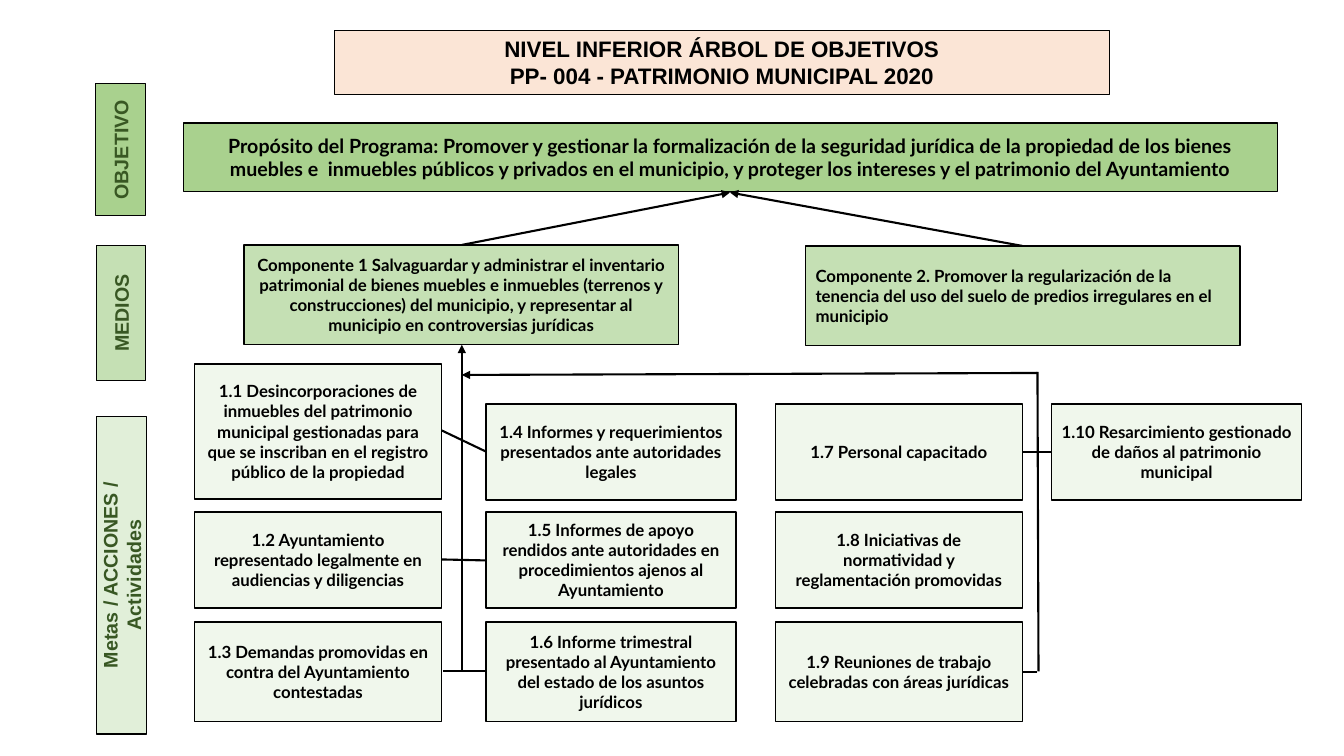
from lxml import etree
from pptx import Presentation
from pptx.dml.color import RGBColor
from pptx.enum.shapes import MSO_CONNECTOR, MSO_SHAPE
from pptx.enum.text import MSO_ANCHOR, PP_ALIGN
from pptx.oxml.ns import qn
from pptx.util import Inches, Pt

RECT = MSO_SHAPE.FLOWCHART_PROCESS
LINE = MSO_CONNECTOR.STRAIGHT
MIDDLE = MSO_ANCHOR.MIDDLE
TOP = MSO_ANCHOR.TOP
LEFT = PP_ALIGN.LEFT
CENTER = PP_ALIGN.CENTER
BLACK = RGBColor(0x00, 0x00, 0x00)
PEACH = RGBColor(0xFB, 0xE5, 0xD6)
GREEN = RGBColor(0xA9, 0xD1, 0x8E)
PALE = RGBColor(0xC5, 0xE0, 0xB4)
DARK = RGBColor(0x38, 0x57, 0x23)

TITLE = {"name": "Arial", "size": Pt(16), "bold": True}
LABEL = {"name": "Arial", "size": Pt(14), "bold": True}
GOAL = {"name": "Lato", "size": Pt(14), "bold": True}
BODY = {"name": "Lato", "size": Pt(12), "bold": True}


def style(shape, text, fill, font, ink=BLACK, align=CENTER, alpha=100, width=1):
    shape.fill.solid()
    shape.fill.fore_color.rgb = fill
    if alpha < 100:
        tint = shape.fill._xPr.find(qn("a:solidFill"))[0]
        etree.SubElement(tint, qn("a:alpha"), val=str(alpha * 1000))
    shape.line.color.rgb = BLACK
    shape.line.width = Pt(width)
    frame = shape.text_frame
    frame.word_wrap = True
    frame.vertical_anchor = MIDDLE
    frame.text = text
    for para in frame.paragraphs:
        para.alignment = align
        para.line_spacing = 1.0
        for key, value in font.items():
            setattr(para.font, key, value)
        para.font.color.rgb = ink


def box(left, top, width, height, *args, **opts):
    shape = slide.shapes.add_shape(
        RECT, Inches(left), Inches(top), Inches(width), Inches(height))
    shape.shadow.inherit = False
    style(shape, *args, **opts)
    return shape


deck = Presentation()
deck.slide_width = Inches(13.33)
deck.slide_height = Inches(7.5)
slide = deck.slides.add_slide(deck.slide_layouts[5])

title = slide.shapes.title
place = {"left": 3.32, "top": 0.3, "width": 7.68, "height": 0.64}
for key, value in place.items():
    setattr(title, key, Inches(value))
style(title, "NIVEL INFERIOR ÁRBOL DE OBJETIVOS\nPP- 004 - PATRIMONIO MUNICIPAL 2020",
      PEACH, TITLE, width=0.75)
title.text_frame.vertical_anchor = TOP

levels = [
    ("OBJETIVO", 0.54, 1.24, 1.31, GREEN, 100),
    ("MEDIOS", 0.53, 2.86, 1.34, PALE, 100),
    ("Metas / ACCIONES / Actividades", -0.37, 5.46, 3.15, PALE, 50),
]
for text, left, top, width, fill, alpha in levels:
    label = box(left, top, width, 0.49, text, fill, LABEL, DARK, alpha=alpha)
    label.rotation = 270

box(1.82, 1.22, 10.85, 0.68,
    "Propósito del Programa: Promover y gestionar la formalización de la seguridad "
    "jurídica de la propiedad de los bienes muebles e  inmuebles públicos y privados "
    "en el municipio, y proteger los intereses y el patrimonio del Ayuntamiento",
    GREEN, GOAL)
box(2.42, 2.43, 4.31, 0.99,
    "Componente 1 Salvaguardar y administrar el inventario patrimonial de bienes "
    "muebles e inmuebles (terrenos y construcciones) del municipio, y representar al "
    "municipio en controversias jurídicas", PALE, BODY)
box(7.99, 2.44, 4.31, 0.99,
    "Componente 2. Promover la regularización de la tenencia del uso del suelo de "
    "predios irregulares en el municipio", PALE, BODY, align=LEFT)

rows = [(4.01, 0.95), (5.08, 0.95), (6.17, 0.99)]
tasks = [
    (1.93, 2.45, [
        "1.1 Desincorporaciones de inmuebles del patrimonio municipal gestionadas "
        "para que se inscriban en el registro público de la propiedad",
        "1.2 Ayuntamiento representado legalmente en audiencias y diligencias",
        "1.3 Demandas promovidas en contra del Ayuntamiento contestadas"]),
    (4.82, 2.48, [
        "1.4 Informes y requerimientos presentados ante autoridades legales",
        "1.5 Informes de apoyo rendidos ante autoridades en procedimientos ajenos "
        "al Ayuntamiento",
        "1.6 Informe trimestral presentado al Ayuntamiento del estado de los "
        "asuntos jurídicos"]),
    (7.69, 2.45, [
        "1.7 Personal capacitado",
        "1.8 Iniciativas de normatividad y reglamentación promovidas",
        "1.9 Reuniones de trabajo celebradas con áreas jurídicas"]),
    (10.43, 2.48, [
        "1.10 Resarcimiento gestionado de daños al patrimonio municipal"]),
]
for left, width, texts in tasks:
    for text, (top, height) in zip(texts, rows):
        task = box(left, top, width, height, text, PALE, BODY, alpha=25)
        if text.startswith("1.1 "):
            task.top, task.height = Inches(3.61), Inches(1.34)

links = [
    (4.82, 6.66, 4.39, 6.66, False),
    (4.82, 5.56, 4.38, 5.55, False),
    (4.82, 4.48, 4.38, 4.27, False),
    (10.29, 3.69, 10.3, 6.66, False),
    (10.29, 6.67, 10.15, 6.67, False),
    (10.43, 4.48, 10.14, 4.48, False),
    (10.14, 2.44, 7.24, 1.91, True),
    (4.58, 2.43, 7.24, 1.91, True),
    (4.58, 6.66, 4.58, 3.42, True),
    (10.29, 3.7, 4.58, 3.72, True),
]
for *ends, arrow in links:
    link = slide.shapes.add_connector(LINE, *map(Inches, ends))
    link.line.color.rgb = BLACK
    link.line.width = Pt(1.5)
    if arrow:
        etree.SubElement(link.line._get_or_add_ln(), qn("a:tailEnd"), type="triangle")
    etree.SubElement(link._element.spPr, qn("a:effectLst"))

deck.save("out.pptx")
